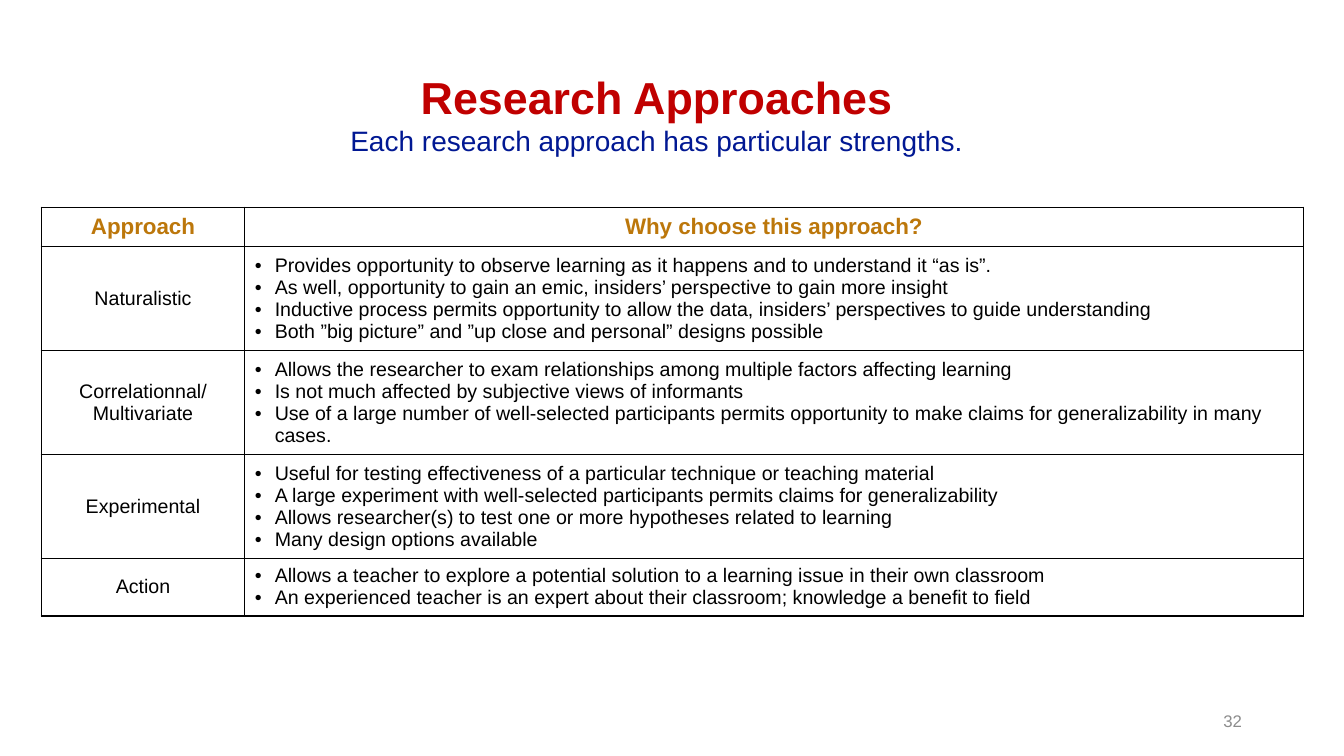
"""Build the slide that compares the strengths of four research approaches."""
from dataclasses import dataclass

from lxml import etree
from pptx import Presentation
from pptx.dml.color import RGBColor
from pptx.enum.text import MSO_ANCHOR, MSO_AUTO_SIZE, PP_ALIGN
from pptx.oxml.ns import qn
from pptx.slide import Slide
from pptx.table import _Cell
from pptx.text.text import TextFrame, _Paragraph
from pptx.util import Cm, Pt

CENTER, LEFT, RIGHT = PP_ALIGN.CENTER, PP_ALIGN.LEFT, PP_ALIGN.RIGHT
TOP, MIDDLE = MSO_ANCHOR.TOP, MSO_ANCHOR.MIDDLE
NO_AUTOFIT = MSO_AUTO_SIZE.NONE

RED = RGBColor(0xC0, 0x00, 0x00)
NAVY = RGBColor(0x01, 0x18, 0x93)
OCHRE = RGBColor(0xBC, 0x77, 0x0B)
BLACK = RGBColor(0x00, 0x00, 0x00)
GREY = RGBColor(0x8C, 0x8C, 0x8C)

FONT = "Arial"
TITLE_ONLY = 5
COLUMN_WIDTHS = (5.13, 26.67)
HEADER_HEIGHT = 0.99
BULLET_INDENT = Cm(0.5)


@dataclass(frozen=True)
class Style:
    """Look of a run and its paragraph."""
    size: float
    color: RGBColor
    bold: bool = False
    align: PP_ALIGN = CENTER
    bulleted: bool = False


@dataclass(frozen=True)
class Approach:
    """One table row: the approach's name lines and its strengths."""
    name: tuple[str, ...]
    strengths: tuple[str, ...]
    height: float


TITLE = Style(32, RED, bold=True)
SUBTITLE = Style(20, NAVY)
HEADER = Style(16, OCHRE, bold=True)
NAME = Style(14, BLACK)
STRENGTH = Style(14, BLACK, align=LEFT, bulleted=True)
PAGE_NUMBER = Style(12, GREY, align=RIGHT)

HEADERS = ("Approach", "Why choose this approach?")
APPROACHES = (
    Approach(("Naturalistic",), (
        "Provides opportunity to observe learning as it happens and to understand it “as is”.",
        "As well, opportunity to gain an emic, insiders’ perspective to gain more insight",
        "Inductive process permits opportunity to allow the data, insiders’ perspectives to guide understanding",
        "Both ”big picture” and ”up close and personal” designs possible",
    ), 2.62),
    Approach(("Correlationnal/", "Multivariate"), (
        "Allows the researcher to exam relationships among multiple factors affecting learning",
        "Is not much affected by subjective views of informants",
        "Use of a large number of well-selected participants permits opportunity to make claims "
        "for generalizability in many cases.",
    ), 2.62),
    Approach(("Experimental",), (
        "Useful for testing effectiveness of a particular technique or teaching material",
        "A large experiment with well-selected participants permits claims for generalizability",
        "Allows researcher(s) to test one or more hypotheses related to learning",
        "Many design options available",
    ), 2.62),
    Approach(("Action",), (
        "Allows a teacher to explore a potential solution to a learning issue in their own classroom",
        "An experienced teacher is an expert about their classroom; knowledge a benefit to field",
    ), 1.45),
)


def add_bullet(paragraph: _Paragraph) -> None:
    """Give the paragraph a hanging bullet."""
    properties = paragraph._p.get_or_add_pPr()
    properties.set("marL", str(BULLET_INDENT))
    properties.set("indent", str(-BULLET_INDENT))
    etree.SubElement(properties, qn("a:buFont"), typeface=FONT)
    etree.SubElement(properties, qn("a:buChar"), char="•")


def write_lines(frame: TextFrame, lines: tuple[tuple[str, Style], ...]) -> None:
    """Write each line as a styled paragraph."""
    for index, (text, style) in enumerate(lines):
        paragraph = frame.add_paragraph() if index else frame.paragraphs[0]
        paragraph.alignment = style.align
        if style.bulleted:
            add_bullet(paragraph)
        run = paragraph.add_run()
        run.text = text
        run.font.name = FONT
        run.font.size = Pt(style.size)
        run.font.bold = style.bold
        run.font.color.rgb = style.color


def fill_cell(cell: _Cell, texts: tuple[str, ...], style: Style) -> None:
    """Border a clear cell and write its lines."""
    properties = cell._tc.get_or_add_tcPr()
    for side in ("a:lnL", "a:lnR", "a:lnT", "a:lnB"):
        border = etree.SubElement(properties, qn(side), w=str(Pt(1)))
        solid = etree.SubElement(border, qn("a:solidFill"))
        etree.SubElement(solid, qn("a:srgbClr"), val=str(BLACK))
    cell.fill.background()
    cell.vertical_anchor = MIDDLE
    write_lines(cell.text_frame, tuple((text, style) for text in texts))


def add_heading(slide: Slide) -> None:
    """Place the title with its subtitle line."""
    heading = slide.shapes.title
    heading.left, heading.top = Cm(1.22), Cm(1.63)
    heading.width, heading.height = Cm(30.66), Cm(2.49)
    frame = heading.text_frame
    frame.auto_size = NO_AUTOFIT
    frame.vertical_anchor = TOP
    write_lines(frame, (
        ("Research Approaches", TITLE),
        ("Each research approach has particular strengths.", SUBTITLE),
    ))


def add_approach_table(slide: Slide) -> None:
    """Draw the table of approaches and their strengths."""
    heights = (HEADER_HEIGHT, *(approach.height for approach in APPROACHES))
    table = slide.shapes.add_table(
        len(heights), len(COLUMN_WIDTHS), Cm(1.04), Cm(5.22),
        Cm(sum(COLUMN_WIDTHS)), Cm(sum(heights))).table
    table.first_row = table.horz_banding = False
    for column, width in zip(table.columns, COLUMN_WIDTHS):
        column.width = Cm(width)
    for row, height in zip(table.rows, heights):
        row.height = Cm(height)
    for column, header in enumerate(HEADERS):
        fill_cell(table.cell(0, column), (header,), HEADER)
    for row, approach in enumerate(APPROACHES, start=1):
        fill_cell(table.cell(row, 0), approach.name, NAME)
        fill_cell(table.cell(row, 1), approach.strengths, STRENGTH)


def add_page_number(slide: Slide) -> None:
    """Write the page number at the lower right."""
    frame = slide.shapes.add_textbox(Cm(23.93), Cm(17.65), Cm(7.62), Cm(1.02)).text_frame
    frame.word_wrap = True
    frame.vertical_anchor = MIDDLE
    write_lines(frame, (("32", PAGE_NUMBER),))


def main() -> None:
    """Build and save the presentation."""
    presentation = Presentation()
    presentation.slide_width, presentation.slide_height = Cm(33.87), Cm(19.05)
    slide = presentation.slides.add_slide(presentation.slide_layouts[TITLE_ONLY])
    add_heading(slide)
    add_approach_table(slide)
    add_page_number(slide)
    presentation.save("out.pptx")


if __name__ == "__main__":
    main()
